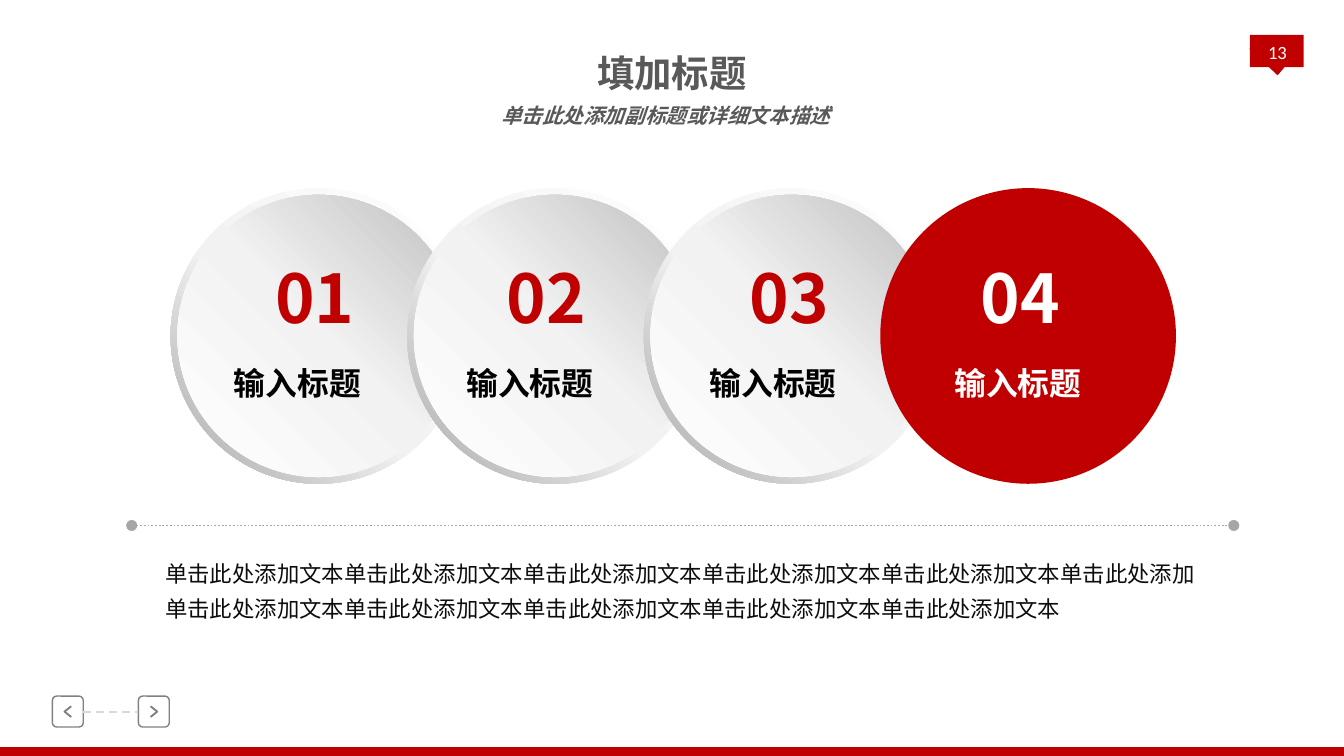
from copy import deepcopy

from lxml import etree
from pptx import Presentation
from pptx import util as u
from pptx.dml.color import RGBColor
from pptx.enum import dml, shapes, text
from pptx.oxml.ns import qn

RED = RGBColor(0xC0, 0x00, 0x00)
WHITE = RGBColor(0xFF, 0xFF, 0xFF)
BLACK = RGBColor(0x00, 0x00, 0x00)
INK = RGBColor(0x0D, 0x0D, 0x0D)
TITLE_GREY = RGBColor(0x59, 0x59, 0x59)
SUBTITLE_GREY = RGBColor(0x58, 0x59, 0x5B)
BUTTON_GREY = RGBColor(0x80, 0x80, 0x80)
RULE_GREY = RGBColor(0xA6, 0xA6, 0xA6)
DASH_GREY = RGBColor(0xD9, 0xD9, 0xD9)
PALE = RGBColor(0xF2, 0xF2, 0xF2)
SILVER = RGBColor(0xBF, 0xBF, 0xBF)

CJK = "Noto Sans CJK SC"
PHRASE = "单击此处添加文本"
BODY = [PHRASE * 5 + "单击此处添加", PHRASE * 5]

# number, label, number left, label left, label indent
STEPS = [
    ("01", "输入标题", 1.95, 1.38, 0.26),
    ("02", "输入标题", 3.67, 3.11, 0.26),
    ("03", "输入标题", 5.48, 4.92, 0.26),
    ("04", "输入标题", 7.20, 6.89, 0.11),
]
CIRCLE_LEFT, CIRCLE_TOP, CIRCLE_PITCH = 1.27, 1.4, 1.76
RING_SIZE, DISC_SIZE = 2.2, 2.1
RING_STOPS = [(0, WHITE), (0.55, PALE), (1, RULE_GREY)]
DISC_STOPS = [(0, WHITE), (0.51, PALE), (1, SILVER)]

# button left, chevron back x, chevron tip x
BUTTONS = [(0.39, 0.53, 0.48), (1.03, 1.12, 1.17)]
BUTTON_TOP, BUTTON_SIZE = 5.18, 0.23

deck = Presentation()
deck.slide_width = u.Inches(10)
deck.slide_height = deck.slide_width * 9 // 16
page = deck.slides.add_slide(deck.slide_layouts[6])


def add_shape(kind, left, top, width, height, fill=None):
    shape = page.shapes.add_shape(kind, *map(u.Inches, (left, top, width, height)))
    shape.shadow.inherit = False
    shape.line.fill.background()
    if fill is None:
        shape.fill.background()
    else:
        shape.fill.solid()
        shape.fill.fore_color.rgb = fill
    return shape


def fill_gradient(shape, stops, angle):
    """Linear gradient; the angle runs counter-clockwise."""
    shape.fill.gradient()
    shape.fill.gradient_angle = angle
    stop_list = shape._element.spPr.find(".//" + qn("a:gsLst"))
    stop_list.append(deepcopy(stop_list[0]))
    for stop, (position, color) in zip(shape.fill.gradient_stops, stops):
        stop.position = position
        stop.color.rgb = color


def add_text(paragraphs, at, size, color, font=CJK, bold=False, italic=False,
             para_format=None, **frame_format):
    box = page.shapes.add_textbox(*map(u.Inches, at))
    frame = box.text_frame
    frame_values = {"word_wrap": True,
                    "auto_size": text.MSO_AUTO_SIZE.SHAPE_TO_FIT_TEXT, **frame_format}
    for name, value in frame_values.items():
        setattr(frame, name, value)
    for index, words in enumerate(paragraphs):
        para = frame.add_paragraph() if index else frame.paragraphs[0]
        for name, value in (para_format or {}).items():
            setattr(para, name, value)
        span = para.add_run()
        span.text = words
        for name, value in {"name": font, "size": u.Pt(size),
                            "bold": bold, "italic": italic}.items():
            setattr(span.font, name, value)
        span.font.color.rgb = color
        latin = span.font._element.find(qn("a:latin"))
        east_asian = etree.Element(qn("a:ea"), typeface=font)
        latin.addnext(east_asian)


def add_line(start, end, color, dash):
    line = page.shapes.add_connector(shapes.MSO_CONNECTOR.STRAIGHT,
                                     *map(u.Inches, start + end))
    line.line.color.rgb = color
    line.line.width = u.Pt(1)
    line.line.dash_style = dash
    etree.SubElement(line._element.spPr, qn("a:effectLst"))
    return line


def margins(left, top, right, bottom):
    return {"margin_left": u.Inches(left), "margin_top": u.Inches(top),
            "margin_right": u.Inches(right), "margin_bottom": u.Inches(bottom)}


kinds = shapes.MSO_SHAPE
centred = {"alignment": text.PP_ALIGN.CENTER}

# Footer bar and page tag
bar = add_shape(kinds.ROUND_2_SAME_RECTANGLE, 0, 5.56, 10, 0.07, RED)
bar.adjustments[0] = 0
add_shape(kinds.RECTANGLE, 9.3, 0.26, 0.4, 0.24, RED)
pointer = add_shape(kinds.ISOSCELES_TRIANGLE, 9.3, 0.35, 0.4, 0.21, RED)
pointer.rotation = 176.8
add_text(["13"], (9.32, 0.22, 0.37, 0.38), 10, WHITE, font="Calibri",
         para_format=centred, vertical_anchor=text.MSO_ANCHOR.MIDDLE,
         auto_size=text.MSO_AUTO_SIZE.NONE, **margins(0, 0, 0, 0.05))

# Navigation buttons
buttons = []
middle = BUTTON_TOP + BUTTON_SIZE / 2
for left, back, tip in BUTTONS:
    button = add_shape(kinds.ROUNDED_RECTANGLE, left, BUTTON_TOP, BUTTON_SIZE, BUTTON_SIZE)
    button.adjustments[0] = 0.14
    builder = page.shapes.build_freeform(u.Inches(back), u.Inches(middle - 0.04))
    builder.add_line_segments([(u.Inches(tip), u.Inches(middle)),
                               (u.Inches(back), u.Inches(middle + 0.04))], close=False)
    chevron = builder.convert_to_shape()
    chevron.shadow.inherit = False
    chevron.fill.background()
    for outlined, width in ((button, 0.75), (chevron, 1)):
        outlined.line.color.rgb = BUTTON_GREY
        outlined.line.width = u.Pt(width)
    buttons.append(button)
link = add_line((0.62, middle), (1.03, middle), DASH_GREY, dml.MSO_LINE.DASH)
link.begin_connect(buttons[0], 3)
link.end_connect(buttons[1], 1)

# Headings
add_text(["填加标题"], (3.9, 0.37, 2.2, 0.34), 20, TITLE_GREY, bold=True,
         para_format=centred, **margins(0, 0, 0, 0))
add_text(["单击此处添加副标题或详细文本描述"], (3.63, 0.72, 2.67, 0.29), 11,
         SUBTITLE_GREY, bold=True, italic=True, word_wrap=False)

# Overlapping circles, the last one highlighted
inset = (RING_SIZE - DISC_SIZE) / 2
for index in range(len(STEPS)):
    left = CIRCLE_LEFT + index * CIRCLE_PITCH
    ring = add_shape(kinds.DONUT, left, CIRCLE_TOP, RING_SIZE, RING_SIZE, RED)
    ring.adjustments[0] = 0.049
    disc = add_shape(kinds.OVAL, left + inset, CIRCLE_TOP + inset, DISC_SIZE, DISC_SIZE, RED)
    if index < len(STEPS) - 1:
        fill_gradient(ring, RING_STOPS, 225)
        fill_gradient(disc, DISC_STOPS, 45)

for index, (number, label, number_left, label_left, indent) in enumerate(STEPS):
    active = index == len(STEPS) - 1
    add_text([number], (number_left, 1.86, 0.83, 0.71), 36, WHITE if active else RED,
             bold=True, word_wrap=False)
    add_text([label], (label_left, 2.59, 1.91, 0.43), 17, WHITE if active else BLACK,
             bold=True, margin_left=u.Inches(0.1 + indent),
             para_format={"alignment": text.PP_ALIGN.JUSTIFY, "line_spacing": 1.25})

# Divider and description
divider = add_line((0.98, 3.91), (9.18, 3.91), RULE_GREY, dml.MSO_LINE.ROUND_DOT)
outline = divider.line._get_or_add_ln()
for end in ("a:headEnd", "a:tailEnd"):
    etree.SubElement(outline, qn(end), type="oval", w="med", len="med")
add_text(BODY, (1.16, 4.07, 7.93, 0.6), 12, INK, para_format={"line_spacing": 1.3},
         **margins(0.07, 0.04, 0.07, 0.04))

deck.save("out.pptx")
